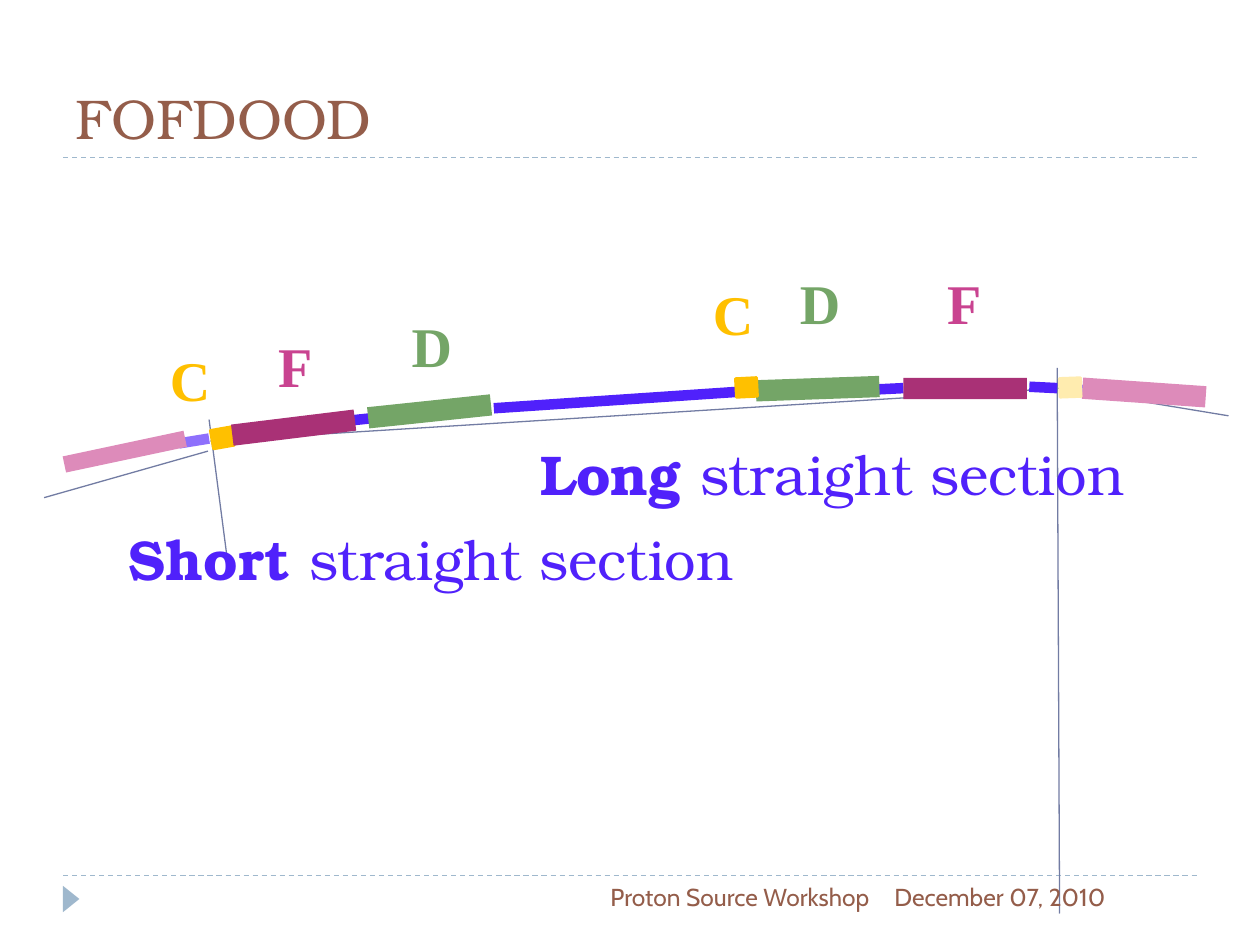
"""Build the FOFDOOD beamline cell slide."""
from dataclasses import dataclass
from typing import Any, NamedTuple

from lxml import etree
from pptx import Presentation
from pptx.dml.color import RGBColor
from pptx.enum.dml import MSO_LINE
from pptx.enum.shapes import MSO_CONNECTOR, MSO_SHAPE
from pptx.enum.text import MSO_ANCHOR, MSO_AUTO_SIZE, PP_ALIGN
from pptx.oxml.ns import qn
from pptx.util import Pt

STRAIGHT = MSO_CONNECTOR.STRAIGHT
RECTANGLE = MSO_SHAPE.RECTANGLE
TRIANGLE = MSO_SHAPE.ISOSCELES_TRIANGLE
DASH = MSO_LINE.DASH
BOTTOM = MSO_ANCHOR.BOTTOM
LEFT, RIGHT = PP_ALIGN.LEFT, PP_ALIGN.RIGHT
FIXED_SIZE = MSO_AUTO_SIZE.NONE
GROW = MSO_AUTO_SIZE.SHAPE_TO_FIT_TEXT


@dataclass(frozen=True)
class Theme:
    """Hold the colours, fonts and type sizes."""
    rule: str = "9FB8CD"
    brown: str = "945D4A"
    guide: str = "727CA3"
    drift: str = "5021FB"
    deep_drift: str = "2E04C6"
    pale_drift: str = "8E70FC"
    focus: str = "A93176"
    focus_label: str = "C94390"
    pale_focus: str = "DD8BBA"
    defocus: str = "74A567"
    corrector: str = "FFC000"
    pale_corrector: str = "FFECAF"
    serif: str = "TeX Gyre Bonum"
    label_face: str = "Times New Roman"
    footer_face: str = "Cabin"
    large: float = 32
    small: float = 14


THEME = Theme()


class Segment(NamedTuple):
    """Describe a straight line."""
    x1: float
    y1: float
    x2: float
    y2: float
    color: str
    weight: float = 0.75


class Block(NamedTuple):
    """Describe a filled shape, by default a long magnet."""
    left: float
    top: float
    color: str
    angle: float = 0
    width: float = 70.6
    height: float = 12.2
    outline: float = 0
    preset: Any = RECTANGLE


class Phrase(NamedTuple):
    """Describe a run of text."""
    text: str
    color: str
    face: str = THEME.serif
    size: float = THEME.large
    bold: bool = False


class Caption(NamedTuple):
    """Describe a text box and its phrases."""
    left: float
    top: float
    width: float
    height: float
    phrases: tuple[Phrase, ...]
    align: Any = LEFT
    wrap: bool = False


def corrector(left: float, top: float, angle: float, color: str = THEME.corrector) -> Block:
    """Return a short corrector magnet."""
    return Block(left, top, color, angle, 12.2, 10.8, 1.5)


def letter(name: str, left: float, top: float, color: str) -> Caption:
    """Return the letter that names a magnet."""
    return Caption(left, top, 38, 46, (Phrase(name, color, THEME.label_face, bold=True),))


def section(name: str, left: float, top: float, width: float) -> Caption:
    """Return the caption of a straight section."""
    return Caption(left, top, width, 46, (
        Phrase(f"{name} ", THEME.drift, bold=True), Phrase("straight section", THEME.drift)))


def footer(text: str, left: float, width: float, align: Any) -> Caption:
    """Return a footer text."""
    phrase = Phrase(text, THEME.brown, THEME.footer_face, THEME.small)
    return Caption(left, 500.4, width, 28.8, (phrase,), align, True)


RULES = [Segment(36, y, 684, y, THEME.rule) for y in (500.4, 90)]
MARKER = Block(33.1, 509, THEME.rule, 90, 15.1, 9.4, preset=TRIANGLE)
LETTERS = [
    letter("F", 151.9, 185.8, THEME.focus_label),
    letter("F", 534.2, 149.8, THEME.focus_label),
    letter("D", 228.2, 174.2, THEME.defocus),
    letter("D", 450, 149.8, THEME.defocus),
    letter("C", 400.3, 156.2, THEME.corrector),
    letter("C", 90, 193.7, THEME.corrector),
]
GUIDES = [Segment(*ends, THEME.guide) for ends in (
    (119.5, 239.8, 130.3, 322.6),
    (604.1, 210.2, 605.5, 522),
    (120.2, 252, 606.2, 221.8),
    (25.2, 284.4, 118.8, 257.8),
    (606.2, 221.8, 702, 237.6),
)]
DRIFTS = [Segment(*parts, 6) for parts in (
    (122.4, 252, 138.2, 249.1, THEME.deep_drift),
    (588.2, 221, 604.1, 221.8, THEME.drift),
    (198, 240.5, 212.4, 239, THEME.drift),
    (501.8, 222.5, 516.2, 221.8, THEME.drift),
    (282.2, 233.3, 432, 223.2, THEME.drift),
    (606.2, 221.8, 622.1, 223.2, THEME.pale_drift),
    (102.2, 253.4, 119.5, 250.6, THEME.pale_drift),
)]
MAGNETS = [
    Block(210.2, 229, THEME.defocus, -6),
    Block(516.2, 216, THEME.focus),
    Block(432, 216, THEME.defocus, -2),
    Block(618.5, 218.2, THEME.pale_focus, 4),
    Block(36, 253.4, THEME.pale_focus, -12, height=9.4),
    corrector(121, 244.8, -10),
    corrector(420.5, 216, -3),
    Block(132.5, 238.3, THEME.focus, -7),
    corrector(605.5, 216, -2, THEME.pale_corrector),
]
CAPTIONS = [
    section("Short", 66.2, 295.9, 363.6),
    section("Long", 301.7, 247.7, 352),
    footer("Proton Source Workshop", 228.2, 275.8, RIGHT),
    footer("December 07, 2010", 504, 180, LEFT),
]


def set_all(target: Any, values: dict[str, Any]) -> None:
    """Set each named attribute of the target."""
    for name, value in values.items():
        setattr(target, name, value)


def draw_segment(slide: Any, segment: Segment, dash: Any = None) -> None:
    """Draw a line without a shadow."""
    ends = (Pt(length) for length in segment[:4])
    connector = slide.shapes.add_connector(STRAIGHT, *ends)
    set_all(connector.line, {"width": Pt(segment.weight), "dash_style": dash})
    connector.line.color.rgb = RGBColor.from_string(segment.color)
    etree.SubElement(connector.line._get_or_add_ln().getparent(), qn("a:effectLst"))


def draw_block(slide: Any, block: Block) -> None:
    """Draw a flat filled shape."""
    frame = (Pt(v) for v in (block.left, block.top, block.width, block.height))
    shape = slide.shapes.add_shape(block.preset, *frame)
    shape.rotation = block.angle
    shape.shadow.inherit = False
    shape.fill.solid()
    shape.fill.fore_color.rgb = RGBColor.from_string(block.color)
    if block.outline:
        shape.line.width = Pt(block.outline)
        shape.line.color.rgb = RGBColor.from_string(block.color)
    else:
        shape.line.fill.background()


def write_phrase(paragraph: Any, phrase: Phrase) -> None:
    """Add a formatted run to the paragraph."""
    run = paragraph.add_run()
    run.text = phrase.text
    set_all(run.font, {"name": phrase.face, "size": Pt(phrase.size), "bold": phrase.bold})
    run.font.color.rgb = RGBColor.from_string(phrase.color)


def draw_caption(slide: Any, caption: Caption) -> None:
    """Draw a text box."""
    frame = slide.shapes.add_textbox(*(Pt(v) for v in caption[:4])).text_frame
    set_all(frame, {"word_wrap": caption.wrap, "auto_size": FIXED_SIZE if caption.wrap else GROW})
    paragraph = frame.paragraphs[0]
    paragraph.alignment = caption.align
    for phrase in caption.phrases:
        write_phrase(paragraph, phrase)


def fill_title(title: Any) -> None:
    """Place and write the title."""
    set_all(title, {"left": Pt(36), "top": Pt(12.2), "width": Pt(648), "height": Pt(77.8)})
    set_all(title.text_frame, {"vertical_anchor": BOTTOM, "auto_size": FIXED_SIZE})
    paragraph = title.text_frame.paragraphs[0]
    paragraph.alignment = LEFT
    write_phrase(paragraph, Phrase("FOFDOOD", THEME.brown))


def main() -> None:
    """Build and save the slide."""
    deck = Presentation()
    set_all(deck, {"slide_width": Pt(720), "slide_height": Pt(540)})
    slide = deck.slides.add_slide(deck.slide_layouts[5])
    for rule in RULES:
        draw_segment(slide, rule, DASH)
    draw_block(slide, MARKER)
    fill_title(slide.shapes.title)
    for label in LETTERS:
        draw_caption(slide, label)
    for segment in GUIDES + DRIFTS:
        draw_segment(slide, segment)
    for magnet in MAGNETS:
        draw_block(slide, magnet)
    for caption in CAPTIONS:
        draw_caption(slide, caption)
    deck.save("out.pptx")


if __name__ == "__main__":
    main()
